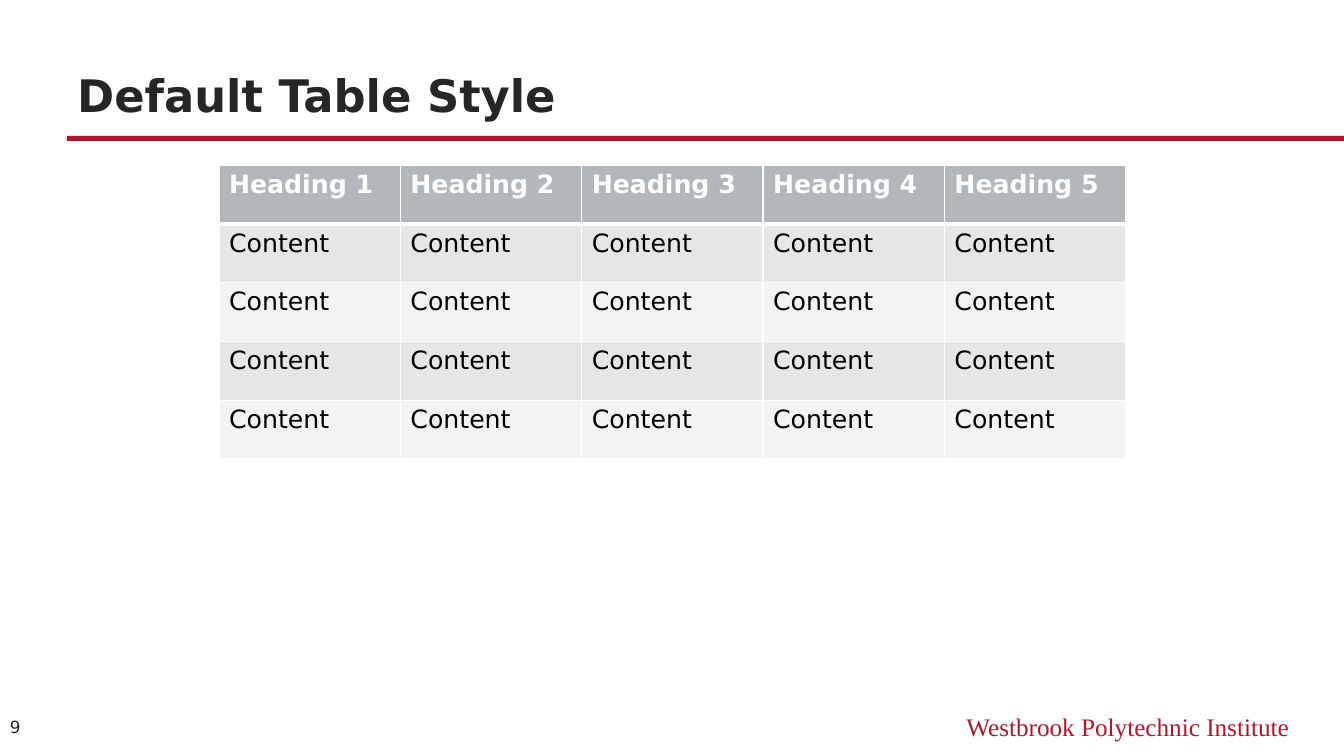
from lxml import etree
from pptx import Presentation, util as u
from pptx.dml.color import RGBColor
from pptx.enum import shapes, text
from pptx.oxml.ns import qn

# Content
TITLE = "Default Table Style"
INSTITUTE = "Westbrook Polytechnic Institute"
PAGE_NUMBER = "9"
HEADINGS = [f"Heading {number}" for number in range(1, 6)]
ROWS = [HEADINGS] + [["Content"] * len(HEADINGS)] * 4

# Style
SANS, SERIF = "DejaVu Sans", "Times New Roman"
CRIMSON = RGBColor(0xAB, 0x19, 0x2D)
DARK = RGBColor(0x26, 0x26, 0x26)
BLACK = RGBColor(0, 0, 0)
WHITE = RGBColor(0xFF, 0xFF, 0xFF)
HEADER_GREY = RGBColor(0xB2, 0xB7, 0xBB)
BANDS = [RGBColor(0xF2, 0xF3, 0xF3), RGBColor(0xE4, 0xE6, 0xE7)]

# Lengths in px
PX = u.Inches(1) / 100.8
WIDTH, HEIGHT = 1344, 756
TITLE_BOX = (67, 38, 1210, 89)
RULE_BOX = (67, 136, 1277, 5)
TABLE_LEFT, TABLE_TOP, TABLE_WIDTH, TABLE_HEIGHT = 219, 165, 907, 294
INSTITUTE_BOX = (806, 706, 493, 40)
NUMBER_BOX = (0, 705, 67, 43)


def px(*lengths):
    return [round(length * PX) for length in lengths]


def write(frame, words, size, font, color, bold=False, align=text.PP_ALIGN.LEFT):
    para = frame.paragraphs[0]
    para.alignment = align
    span = para.add_run()
    span.text = words
    span.font.size = u.Pt(size)
    span.font.name = font
    span.font.bold = bold
    span.font.color.rgb = color


def add_label(page, place, anchor, *style, **options):
    box = page.shapes.add_textbox(*px(*place))
    box.text_frame.word_wrap = True
    box.text_frame.vertical_anchor = anchor
    write(box.text_frame, *style, **options)


def set_borders(cell, top, bottom):
    properties = cell._tc.get_or_add_tcPr()
    for place, (side, points) in enumerate(
            [("L", 1), ("R", 1), ("T", top), ("B", bottom)]):
        line = etree.Element(qn(f"a:ln{side}"), w=str(u.Pt(points)))
        fill = etree.SubElement(line, qn("a:solidFill"))
        etree.SubElement(fill, qn("a:srgbClr"), val=str(WHITE))
        properties.insert(place, line)


deck = Presentation()
deck.slide_width, deck.slide_height = px(WIDTH, HEIGHT)
page = deck.slides.add_slide(deck.slide_layouts[5])

# Title and the rule under it
title = page.shapes.title
title.left, title.top, title.width, title.height = px(*TITLE_BOX)
frame = title.text_frame
frame.auto_size = text.MSO_AUTO_SIZE.NONE
frame.vertical_anchor = text.MSO_ANCHOR.BOTTOM
write(frame, TITLE, 32, SANS, DARK, bold=True)

rule = page.shapes.add_shape(shapes.MSO_SHAPE.RECTANGLE, *px(*RULE_BOX))
rule.shadow.inherit = False
rule.fill.solid()
rule.fill.fore_color.rgb = CRIMSON
rule.line.fill.background()

# Table
table = page.shapes.add_table(
    len(ROWS), len(HEADINGS),
    *px(TABLE_LEFT, TABLE_TOP, TABLE_WIDTH, TABLE_HEIGHT)).table
for row, words in enumerate(ROWS):
    header = row == 0
    for column, word in enumerate(words):
        cell = table.cell(row, column)
        cell.fill.solid()
        cell.fill.fore_color.rgb = HEADER_GREY if header else BANDS[row % 2]
        set_borders(cell, top=3 if row == 1 else 1, bottom=3 if header else 1)
        write(cell.text_frame, word, 18, SANS, WHITE if header else BLACK, bold=header)

# Footer
add_label(page, INSTITUTE_BOX, text.MSO_ANCHOR.TOP, INSTITUTE, 18, SERIF, CRIMSON,
          align=text.PP_ALIGN.RIGHT)
add_label(page, NUMBER_BOX, text.MSO_ANCHOR.MIDDLE, PAGE_NUMBER, 12, SANS, DARK)

deck.save("out.pptx")
